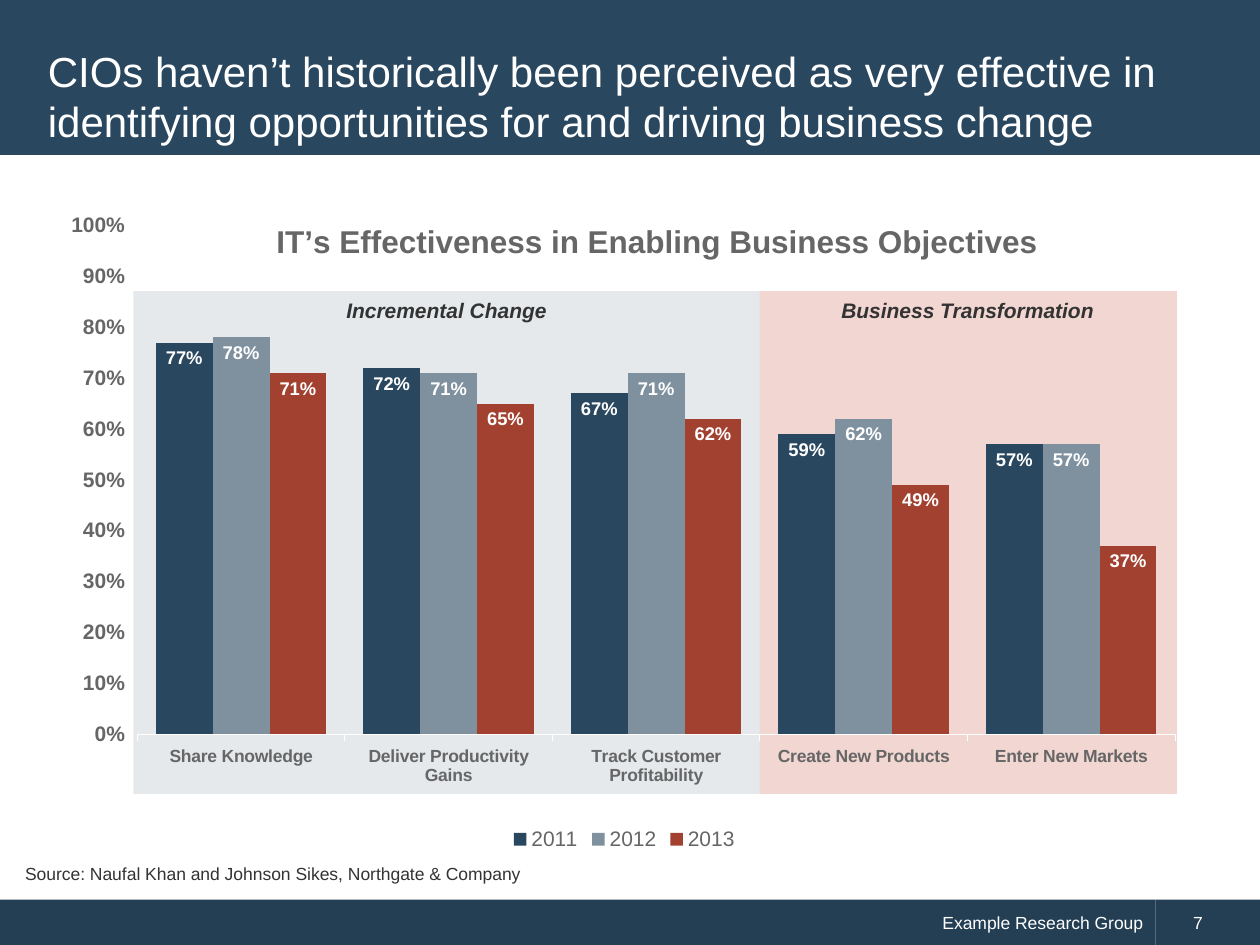
from lxml import etree
from pptx import Presentation
from pptx.chart.data import CategoryChartData
from pptx.dml.color import RGBColor
from pptx.enum.chart import XL_CHART_TYPE, XL_LABEL_POSITION, XL_LEGEND_POSITION, XL_TICK_MARK
from pptx.enum.shapes import MSO_SHAPE
from pptx.enum.text import MSO_ANCHOR, PP_ALIGN
from pptx.oxml.ns import qn
from pptx.util import Inches, Pt

CLUSTERED = XL_CHART_TYPE.COLUMN_CLUSTERED
INSIDE_END = XL_LABEL_POSITION.INSIDE_END
LEGEND_BOTTOM = XL_LEGEND_POSITION.BOTTOM
TICK_OUTSIDE = XL_TICK_MARK.OUTSIDE
TICK_NONE = XL_TICK_MARK.NONE
RECTANGLE = MSO_SHAPE.RECTANGLE
TOP, MIDDLE = MSO_ANCHOR.TOP, MSO_ANCHOR.MIDDLE
LEFT, CENTER, RIGHT = PP_ALIGN.LEFT, PP_ALIGN.CENTER, PP_ALIGN.RIGHT

WHITE = RGBColor(0xFF, 0xFF, 0xFF)
NAVY = RGBColor(0x29, 0x47, 0x5F)
FOOTER_NAVY = RGBColor(0x24, 0x3F, 0x54)
SLATE = RGBColor(0x7F, 0x91, 0x9F)
RED = RGBColor(0xA2, 0x41, 0x30)
PALE_GRAY = RGBColor(0xE5, 0xE9, 0xEC)
PALE_RED = RGBColor(0xF1, 0xD6, 0xD1)
DARK_TEXT = RGBColor(0x33, 0x33, 0x33)
GRAY_TEXT = RGBColor(0x66, 0x66, 0x66)

OBJECTIVES = ["Share Knowledge", "Deliver Productivity Gains", "Track Customer Profitability",
              "Create New Products", "Enter New Markets"]
RATINGS = [
    ("2011", NAVY, [0.77, 0.72, 0.67, 0.59, 0.57]),
    ("2012", SLATE, [0.78, 0.71, 0.71, 0.62, 0.57]),
    ("2013", RED, [0.71, 0.65, 0.62, 0.49, 0.37]),
]


class SlideBuilder:
    """Holds the style and the current slide, and adds each kind of element."""

    def __init__(self, presentation, font="Arial"):
        self.font = font
        self.slide = presentation.slides.add_slide(presentation.slide_layouts[5])

    def style(self, font, size, color, bold=False, italic=False):
        font.name = self.font
        font.size = Pt(size)
        font.color.rgb = color
        font.bold = bold
        font.italic = italic

    def add_text(self, frame, text, size, color, align=LEFT, anchor=TOP, **emphasis):
        frame.word_wrap = True
        frame.vertical_anchor = anchor
        paragraph = frame.paragraphs[0]
        paragraph.alignment = align
        run = paragraph.add_run()
        run.text = text
        self.style(run.font, size, color, **emphasis)

    def band(self, left, top, width, height, fill):
        shape = self.slide.shapes.add_shape(
            RECTANGLE, Inches(left), Inches(top), Inches(width), Inches(height))
        shape.shadow.inherit = False
        shape.fill.solid()
        shape.fill.fore_color.rgb = fill
        shape.line.fill.background()
        return shape.text_frame

    def title(self, text, left, top, width, height):
        title = self.slide.shapes.title
        title.left, title.top = Inches(left), Inches(top)
        title.width, title.height = Inches(width), Inches(height)
        self.add_text(title.text_frame, text, 24, WHITE, anchor=MIDDLE)
        title.element.getparent().append(title.element)

    def text_box(self, text, left, top, width, height):
        box = self.slide.shapes.add_textbox(
            Inches(left), Inches(top), Inches(width), Inches(height))
        self.add_text(box.text_frame, text, 10, DARK_TEXT)

    def place(self, parent, index, **settings):
        layout = parent.find(qn("c:layout"))
        if layout is None:
            layout = etree.SubElement(parent, qn("c:layout"))
            parent.insert(index, layout)
        manual = etree.SubElement(layout, qn("c:manualLayout"))
        for name, value in settings.items():
            etree.SubElement(manual, qn(f"c:{name}")).set("val", str(value))

    def column_chart(self, heading, categories, series_rows, left, top, width, height):
        data = CategoryChartData(number_format="0%")
        data.categories = categories
        for name, _, values in series_rows:
            data.add_series(name, values)
        chart = self.slide.shapes.add_chart(
            CLUSTERED, Inches(left), Inches(top), Inches(width), Inches(height), data).chart
        self.style(chart.font, 10, DARK_TEXT)
        self.chart_heading(chart, heading)
        self.place(chart.element.find(".//" + qn("c:plotArea")), 0, layoutTarget="inner",
                   xMode="edge", yMode="edge", x=0.073, y=0.076, w=0.91, h=0.746)
        self.axes(chart)
        chart.has_legend = True
        chart.legend.position = LEGEND_BOTTOM
        chart.legend.include_in_layout = False
        self.style(chart.legend.font, 12, GRAY_TEXT)
        plot = chart.plots[0]
        plot.gap_width = 65
        plot.overlap = 0
        plot.vary_by_categories = False
        for series, (_, color, _) in zip(plot.series, series_rows):
            series.format.fill.solid()
            series.format.fill.fore_color.rgb = color
            labels = series.data_labels
            labels.show_value = True
            labels.position = INSIDE_END
            labels.number_format = "0%"
            labels.number_format_is_linked = False
            self.style(labels.font, 10.5, WHITE, bold=True)

    def chart_heading(self, chart, heading):
        chart.has_title = True
        self.add_text(chart.chart_title.text_frame, heading, 18, GRAY_TEXT, CENTER, bold=True)
        title = chart.element.find(".//" + qn("c:title"))
        self.place(title, 1, xMode="edge", yMode="edge", x=0.19, y=0.06)
        title.find(qn("c:overlay")).set("val", "1")

    def axes(self, chart):
        category_axis, value_axis = chart.category_axis, chart.value_axis
        self.style(category_axis.tick_labels.font, 10, GRAY_TEXT, bold=True)
        category_axis.major_tick_mark = TICK_OUTSIDE
        category_axis.format.line.color.rgb = WHITE
        category_axis.format.line.width = Pt(0.5)
        self.style(value_axis.tick_labels.font, 12, GRAY_TEXT, bold=True)
        value_axis.tick_labels.number_format = "0%"
        value_axis.tick_labels.number_format_is_linked = False
        value_axis.minimum_scale, value_axis.maximum_scale = 0, 1
        value_axis.major_unit = 0.1
        value_axis.has_major_gridlines = False
        value_axis.major_tick_mark = TICK_OUTSIDE
        value_axis.minor_tick_mark = TICK_NONE
        value_axis.format.line.fill.background()


def main():
    presentation = Presentation()
    presentation.slide_width, presentation.slide_height = Inches(10), Inches(7.5)
    builder = SlideBuilder(presentation)

    footer = builder.band(0, 7.14, 9.17, 0.37, FOOTER_NAVY)
    builder.add_text(footer, "Example Research Group", 10, WHITE, RIGHT, MIDDLE)
    page_number = builder.band(9.17, 7.14, 0.83, 0.37, FOOTER_NAVY)
    page_number.margin_left = Inches(0.3)
    builder.add_text(page_number, "7", 10, WHITE, LEFT, MIDDLE)
    builder.band(0, 0, 10, 1.23, NAVY)

    for label, left, width, fill in [("Business Transformation", 6.02, 3.32, PALE_RED),
                                     ("Incremental Change", 1.06, 4.97, PALE_GRAY)]:
        region = builder.band(left, 2.31, width, 3.99, fill)
        builder.add_text(region, label, 12, DARK_TEXT, CENTER, bold=True, italic=True)

    builder.column_chart("IT’s Effectiveness in Enabling Business Objectives",
                         OBJECTIVES, RATINGS, 0.43, 1.38, 9.05, 5.41)
    builder.title("CIOs haven’t historically been perceived as very effective in "
                  "identifying opportunities for and driving business change",
                  0.28, 0.28, 9.43, 0.96)
    builder.text_box("Source: Naufal Khan and Johnson Sikes, Northgate & Company",
                     0.1, 6.8, 5.42, 0.27)
    presentation.save("out.pptx")


if __name__ == "__main__":
    main()
